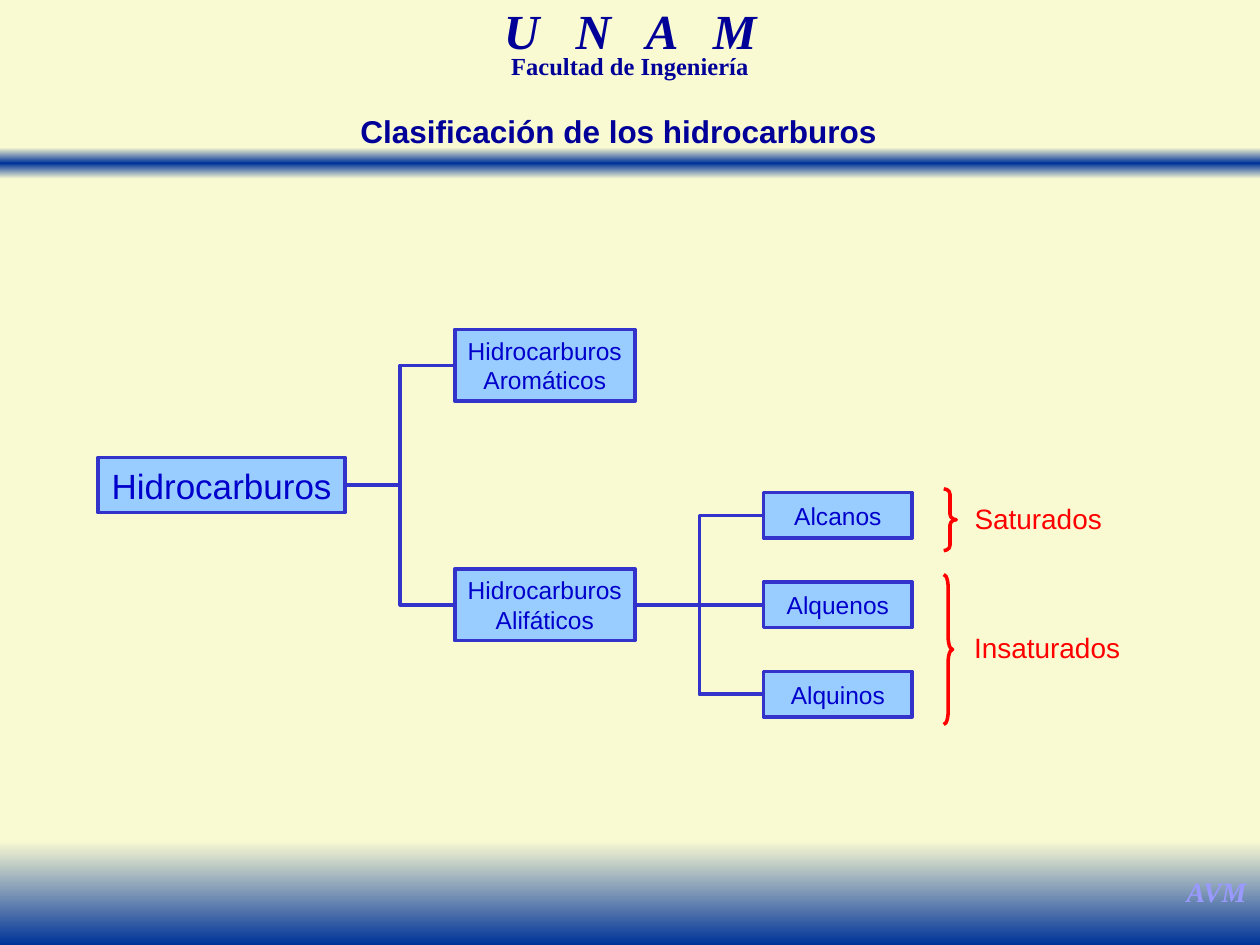
from lxml import etree
from pptx import Presentation
from pptx.dml.color import RGBColor
from pptx.enum.shapes import MSO_CONNECTOR, MSO_SHAPE
from pptx.enum.text import MSO_ANCHOR, MSO_AUTO_SIZE, PP_ALIGN
from pptx.oxml.ns import qn
from pptx.util import Inches, Pt

RECT, BRACE = MSO_SHAPE.RECTANGLE, MSO_SHAPE.RIGHT_BRACE
STRAIGHT, ELBOW = MSO_CONNECTOR.STRAIGHT, MSO_CONNECTOR.ELBOW
CENTER = PP_ALIGN.CENTER
TOP, MIDDLE = MSO_ANCHOR.TOP, MSO_ANCHOR.MIDDLE
LEFT_SIDE, RIGHT_SIDE = 1, 3
COLUMNS, ROWS = 100, 75
CELL = Inches(0.1)
SANS, SERIF = "Arial", "Times New Roman"
COLORS = {
    "cream": "FAFAD2", "band": "003399", "heading": "000099",
    "signature": "9999FF", "box": "99CCFF", "outline": "3333CC",
    "label": "0000CC", "note": "FF0000",
}


def rgb(name):
    """Return the palette colour of that name."""
    return RGBColor.from_string(COLORS[name])


def grid(*cells):
    """Turn grid columns and rows into lengths."""
    return [round(cell * CELL) for cell in cells]


def set_line(item, color):
    """Give a shape or connector the diagram's line."""
    item.line.color.rgb = rgb(color)
    item.line.width = Pt(2)


def write(shape, lines, size, color, font=SANS, bold=None, italic=None,
          anchor=MIDDLE, wrap=False, spacing=None):
    """Write centred lines, each a list of (text, tracking) runs or a string."""
    frame = shape.text_frame
    frame.word_wrap = wrap
    frame.auto_size = MSO_AUTO_SIZE.NONE
    frame.vertical_anchor = anchor
    for index, line in enumerate(lines):
        paragraph = frame.add_paragraph() if index else frame.paragraphs[0]
        paragraph.alignment = CENTER
        paragraph.line_spacing = spacing
        for text, tracking in [(line, 0)] if isinstance(line, str) else line:
            run = paragraph.add_run()
            run.text = text
            run.font.name, run.font.size = font, Pt(size)
            run.font.bold, run.font.italic = bold, italic
            run.font.color.rgb = rgb(color)
            if tracking:
                run.font._element.set("spc", str(tracking * 100))


def add_label(slide, area, lines, size, color, **style):
    """Add a text box on the grid."""
    write(slide.shapes.add_textbox(*grid(*area)), lines, size, color, **style)


def add_gradient_band(slide, top, height, stops):
    """Add a full-width band shaded from top to bottom."""
    band = slide.shapes.add_shape(RECT, *grid(0, top, COLUMNS, height))
    band.shadow.inherit = False
    band.line.fill.background()
    band.fill.gradient()
    band.fill.gradient_angle = 270
    stop_list = band._element.spPr.find(".//" + qn("a:gsLst"))
    for old_stop in list(stop_list):
        stop_list.remove(old_stop)
    for percent, color in stops:
        stop = etree.SubElement(stop_list, qn("a:gs"), pos=str(percent * 1000))
        etree.SubElement(stop, qn("a:srgbClr"), val=COLORS[color])


def add_class_box(slide, left, middle, width, height, lines, size=14):
    """Add a box of the classification, centred on a row."""
    box = slide.shapes.add_shape(
        RECT, *grid(left, middle - height / 2, width, height))
    box.shadow.inherit = False
    box.fill.solid()
    box.fill.fore_color.rgb = rgb("box")
    set_line(box, "outline")
    write(box, lines, size, "label")
    return box


def add_branch(slide, parent, child):
    """Join the right side of a parent to the left side of a child."""
    level = abs(parent.top + parent.height / 2 - child.top - child.height / 2) < 2
    branch = slide.shapes.add_connector(STRAIGHT if level else ELBOW, 0, 0, 0, 0)
    branch.begin_connect(parent, RIGHT_SIDE)
    branch.end_connect(child, LEFT_SIDE)
    set_line(branch, "outline")
    etree.SubElement(branch._element.spPr, qn("a:effectLst"))


def add_brace(slide, area, curl):
    """Add a brace that gathers a family of compounds."""
    brace = slide.shapes.add_shape(BRACE, *grid(*area))
    brace.shadow.inherit = False
    brace.fill.background()
    set_line(brace, "note")
    brace.adjustments[0] = curl


def add_frame(slide):
    """Add the bands, the school heading and the signature."""
    add_gradient_band(slide, 11.7, 2.5,
                      [(0, "cream"), (50, "band"), (100, "cream")])
    add_gradient_band(slide, 66.7, ROWS - 66.7, [(0, "cream"), (100, "band")])
    heading = {"font": SERIF, "bold": True, "anchor": TOP,
               "wrap": True, "spacing": 0.7}
    add_label(slide, (30.4, 0.8, 39.2, 4.3), [[("U N A ", 7), ("M", 0)]],
              28, "heading", italic=True, **heading)
    add_label(slide, (32.1, 4.2, 35.8, 2.6), ["Facultad de Ingeniería"],
              14, "heading", **heading)
    add_label(slide, (93.1, 68.9, 6.9, 3.7), ["AVM"], 16, "signature",
              font=SERIF, bold=True, italic=True)


def add_title(slide):
    """Place the slide title above the upper band."""
    title = slide.shapes.title
    title.left, title.top, title.width, title.height = grid(26.7, 8.4, 44.8, 4)
    write(title, ["Clasificación de los hidrocarburos"], 18, "heading", bold=True)


def add_classification(slide):
    """Add the tree of hydrocarbons."""
    root_row, class_step, family_step = 38.5, 9.5, 7.1
    aliphatic_row = root_row + class_step
    root = add_class_box(slide, 7.8, root_row, 19.6, 4.4, ["Hidrocarburos"], 20)
    aromatic, aliphatic = [
        add_class_box(slide, 36.1, row, 14.3, 5.7, ["Hidrocarburos", kind])
        for kind, row in (("Aromáticos", root_row - class_step),
                          ("Alifáticos", aliphatic_row))]
    families = [
        add_class_box(slide, 60.6, aliphatic_row + step * family_step,
                      11.8, 3.6, [family])
        for step, family in enumerate(("Alcanos", "Alquenos", "Alquinos"), -1)]
    for parent, children in ((root, (aromatic, aliphatic)), (aliphatic, families)):
        for child in children:
            add_branch(slide, parent, child)


def add_saturation_notes(slide):
    """Add the braces and their notes."""
    add_brace(slide, (74.9, 38.8, 1, 4.9), 0.42)
    add_label(slide, (76.3, 39.3, 12.2, 3.7), ["Saturados"], 16, "note")
    add_brace(slide, (74.9, 45.6, 0.7, 11.9), 1.43)
    add_label(slide, (76.2, 49.5, 13.8, 3.7), ["Insaturados"], 16, "note")


def main():
    """Build and save the slide."""
    deck = Presentation()
    deck.slide_width, deck.slide_height = grid(COLUMNS, ROWS)
    slide = deck.slides.add_slide(deck.slide_layouts[5])
    slide.background.fill.solid()
    slide.background.fill.fore_color.rgb = rgb("cream")
    add_frame(slide)
    add_title(slide)
    add_classification(slide)
    add_saturation_notes(slide)
    deck.save("out.pptx")


if __name__ == "__main__":
    main()
